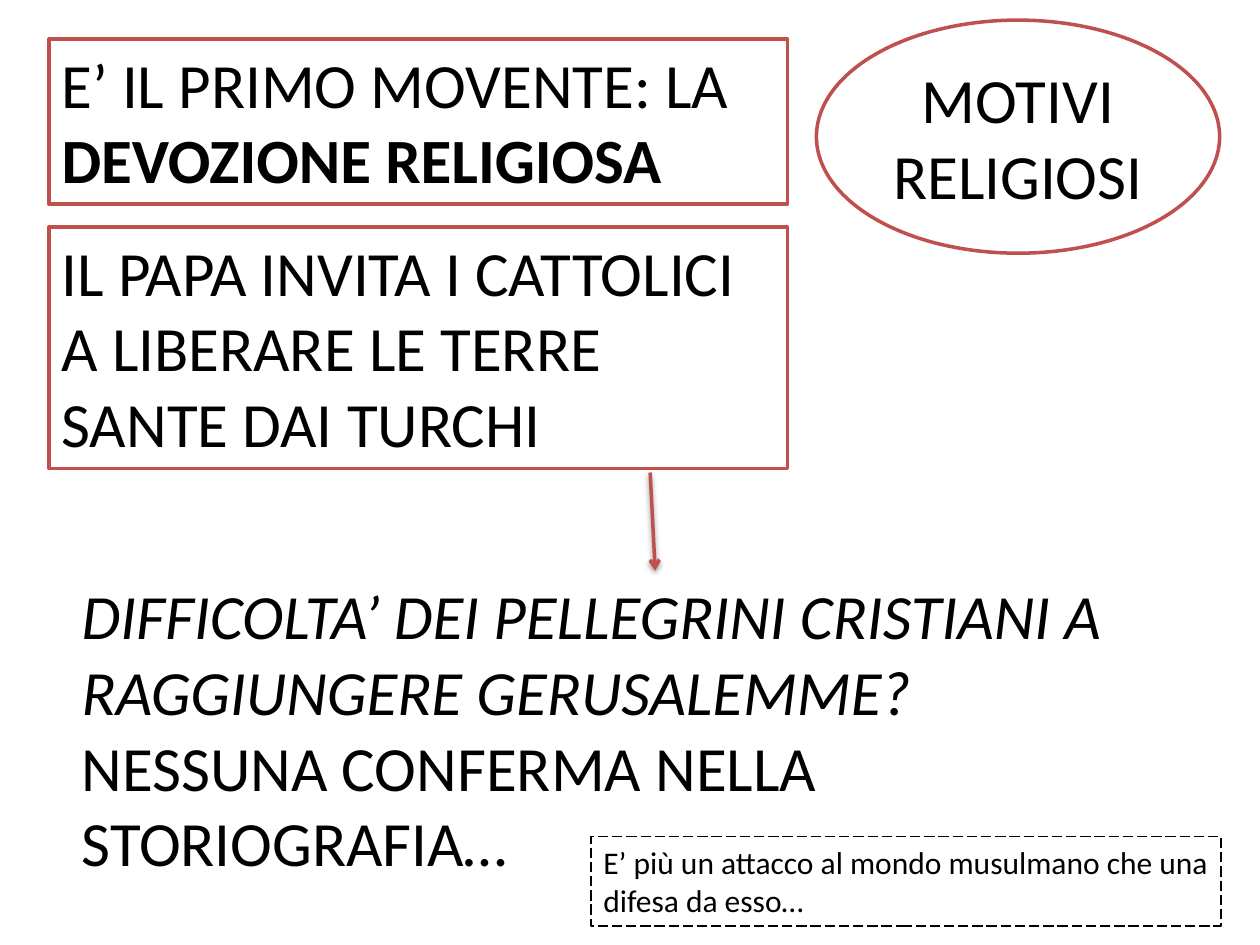
from lxml.etree import SubElement as Sub
from pptx import Presentation
from pptx.dml.color import RGBColor as RGB
from pptx.enum.dml import MSO_LINE as Dash
from pptx.enum.shapes import MSO_CONNECTOR as Conn, MSO_SHAPE as Kind
from pptx.enum.text import MSO_ANCHOR as Anchor, MSO_AUTO_SIZE as Auto, PP_ALIGN as Align
from pptx.oxml.ns import qn
from pptx.util import Inches, Pt

HUES = {"red": "C0504D", "ink": "000000", "paper": "FFFFFF"}
RED = {"hue": "red", "width": 2}
THIN = {"hue": "ink", "width": 0.75, "dash": Dash.LONG_DASH}
BOLD, SLANT = {"bold": True}, {"italic": True}

# Each box: preset, place, fill, line, size, alignment, paragraphs of (text, format) runs
BOXES = [
    (Kind.RECTANGLE, (0.39, 1.8, 5.86, 1.92), "paper", RED, 36, Align.LEFT,
     [[("IL PAPA INVITA I CATTOLICI A LIBERARE LE TERRE SANTE DAI TURCHI", {})]]),
    (None, (0.55, 4.53, 9.3, 2.52), None, None, 36, Align.LEFT,
     [[("DIFFICOLTA’ DEI PELLEGRINI CRISTIANI A RAGGIUNGERE GERUSALEMME?", SLANT)],
      [("NESSUNA CONFERMA NELLA STORIOGRAFIA…", {})]]),
    (Kind.OVAL, (6.48, 0.16, 3.2, 1.85), "paper", RED, 36, Align.CENTER,
     [[("MOTIVI RELIGIOSI", {})]]),
    (Kind.RECTANGLE, (0.39, 0.31, 5.86, 1.31), "paper", RED, 36, Align.LEFT,
     [[("E’ IL PRIMO MOVENTE: LA ", {}), ("DEVOZIONE RELIGIOSA", BOLD)]]),
    (Kind.RECTANGLE, (4.69, 6.64, 5, 0.71), None, THIN, 18, Align.LEFT,
     [[("E’ più un attacco al mondo musulmano che una difesa da esso…", {})]]),
]
ARROW = (5.16, 3.75, 5.2, 4.53)


def hue(name):
    return RGB.from_string(HUES[name])


def draw_line(line, look):
    line.color.rgb = hue(look["hue"])
    line.width = Pt(look["width"])
    if "dash" in look:
        line.dash_style = look["dash"]


def write(frame, paras, size, align):
    frame.word_wrap = True
    frame.auto_size = Auto.SHAPE_TO_FIT_TEXT
    frame.vertical_anchor = Anchor.TOP
    for i, runs in enumerate(paras):
        para = frame.paragraphs[0] if i == 0 else frame.add_paragraph()
        para.alignment = align
        for text, form in runs:
            run = para.add_run()
            run.text = text
            font = run.font
            font.color.rgb = hue("ink")
            for key, val in {"name": "Calibri", "size": Pt(size), **form}.items():
                setattr(font, key, val)


def add_box(slide, kind, place, fill, look, size, align, paras):
    place = [Inches(n) for n in place]
    if kind is None:
        box = slide.shapes.add_textbox(*place)
    else:
        box = slide.shapes.add_shape(kind, *place)
        box.shadow.inherit = False
        if fill:
            box.fill.solid()
            box.fill.fore_color.rgb = hue(fill)
        else:
            box.fill.background()
        draw_line(box.line, look)
    write(box.text_frame, paras, size, align)


def add_arrow(slide, ends):
    arrow = slide.shapes.add_connector(Conn.STRAIGHT, *[Inches(n) for n in ends])
    draw_line(arrow.line, RED)
    Sub(arrow.line._get_or_add_ln(), qn("a:tailEnd"), type="arrow")
    # Soft shadow straight below
    effects = Sub(arrow._element.spPr, qn("a:effectLst"))
    shade = Sub(effects, qn("a:outerShdw"), blurRad=str(Pt(3.1)), dist=str(Pt(1.6)),
                dir="5400000", rotWithShape="0")
    Sub(Sub(shade, qn("a:srgbClr"), val=HUES["ink"]), qn("a:alpha"), val="38000")


def main():
    deck = Presentation()
    deck.slide_width, deck.slide_height = Inches(10), Inches(7.5)
    slide = deck.slides.add_slide(deck.slide_layouts[6])
    for box in BOXES[:-1]:
        add_box(slide, *box)
    add_arrow(slide, ARROW)
    # The dashed note lies on top
    add_box(slide, *BOXES[-1])
    deck.save("out.pptx")


if __name__ == "__main__":
    main()
